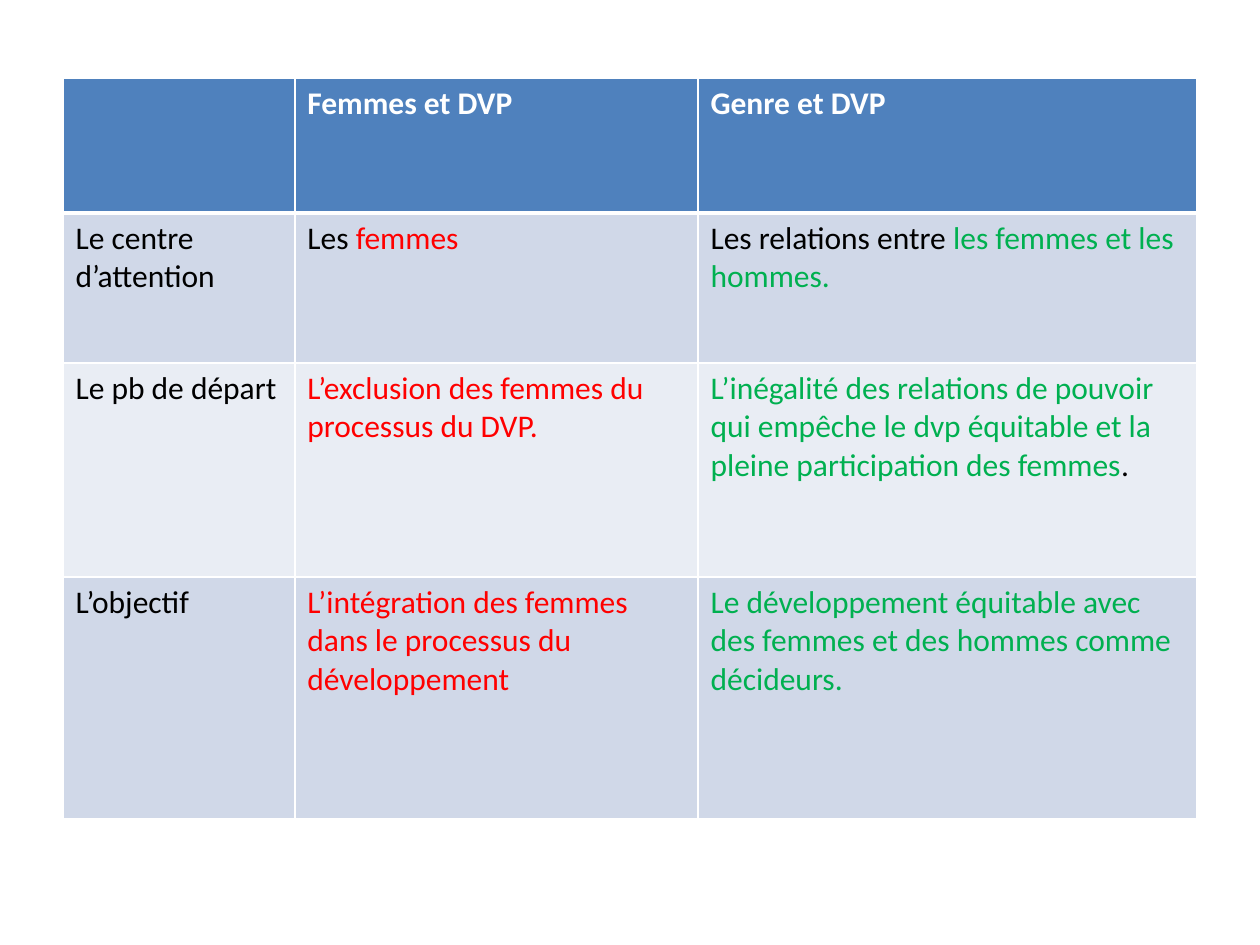
import pptx
import pptx.dml.color
import pptx.oxml
import pptx.oxml.ns
import pptx.util
from pptx.util import Inches

COLORS = {
    "header": "4F81BD", "odd_row": "D0D8E8", "even_row": "E9EDF4",
    "white": "FFFFFF", "black": "000000", "red": "FF0000", "green": "00B050",
}
COLUMN_WIDTHS = [1.84, 3.2, 3.96]
ROW_HEIGHTS = [1.07, 1.19, 1.7, 1.92]

# Each cell is a list of (text, colour) runs.
ROWS = [
    [[],
     [("Femmes et DVP", "white")],
     [("Genre et DVP", "white")]],
    [[("Le centre d’attention", "black")],
     [("Les ", "black"), ("femmes", "red")],
     [("Les relations entre ", "black"), ("les femmes et les hommes.", "green")]],
    [[("Le pb de départ", "black")],
     [("L’exclusion des femmes du processus du DVP.", "red")],
     [("L’inégalité des relations de pouvoir qui empêche le dvp équitable "
       "et la pleine participation des femmes", "green"), (".", "black")]],
    [[("L’objectif", "black")],
     [("L’intégration des femmes dans le processus du développement", "red")],
     [("Le développement équitable avec des femmes et des hommes comme "
       "décideurs.", "green")]],
]


def rgb(name):
    return pptx.dml.color.RGBColor.from_string(COLORS[name])


def set_borders(cell, points):
    """Draw white borders; points maps each side (L, R, T, B) to its width."""
    properties = cell._tc.get_or_add_tcPr()
    for side, width in points.items():
        properties.append(pptx.oxml.parse_xml(
            f'<a:ln{side} {pptx.oxml.ns.nsdecls("a")} w="{pptx.util.Pt(width)}">'
            f'<a:solidFill><a:srgbClr val="{COLORS["white"]}"/></a:solidFill>'
            f'</a:ln{side}>'))


def fill_cell(cell, runs, row_index):
    header = row_index == 0
    set_borders(cell, {"L": 1, "R": 1, "T": 3 if row_index == 1 else 1,
                       "B": 3 if header else 1})
    cell.fill.solid()
    cell.fill.fore_color.rgb = rgb(
        "header" if header else "odd_row" if row_index % 2 else "even_row")
    para = cell.text_frame.paragraphs[0]
    for text, color in runs:
        span = para.add_run()
        span.text = text
        span.font.name = "Calibri"
        span.font.size = pptx.util.Pt(18)
        span.font.bold = header
        span.font.color.rgb = rgb(color)


def add_comparison_table(page, left, top, width, height):
    table = page.shapes.add_table(
        len(ROWS), len(COLUMN_WIDTHS),
        Inches(left), Inches(top), Inches(width), Inches(height)).table
    for column, share in zip(table.columns, COLUMN_WIDTHS):
        column.width = Inches(width * share / sum(COLUMN_WIDTHS))
    for row, share in zip(table.rows, ROW_HEIGHTS):
        row.height = Inches(height * share / sum(ROW_HEIGHTS))
    for row_index, cells in enumerate(ROWS):
        for column_index, runs in enumerate(cells):
            fill_cell(table.cell(row_index, column_index), runs, row_index)


def main():
    deck = pptx.Presentation()
    deck.slide_width, deck.slide_height = Inches(10), Inches(7.5)
    page = deck.slides.add_slide(deck.slide_layouts[6])
    add_comparison_table(page, 0.5, 0.62, 9, 5.88)
    deck.save("out.pptx")


if __name__ == "__main__":
    main()
